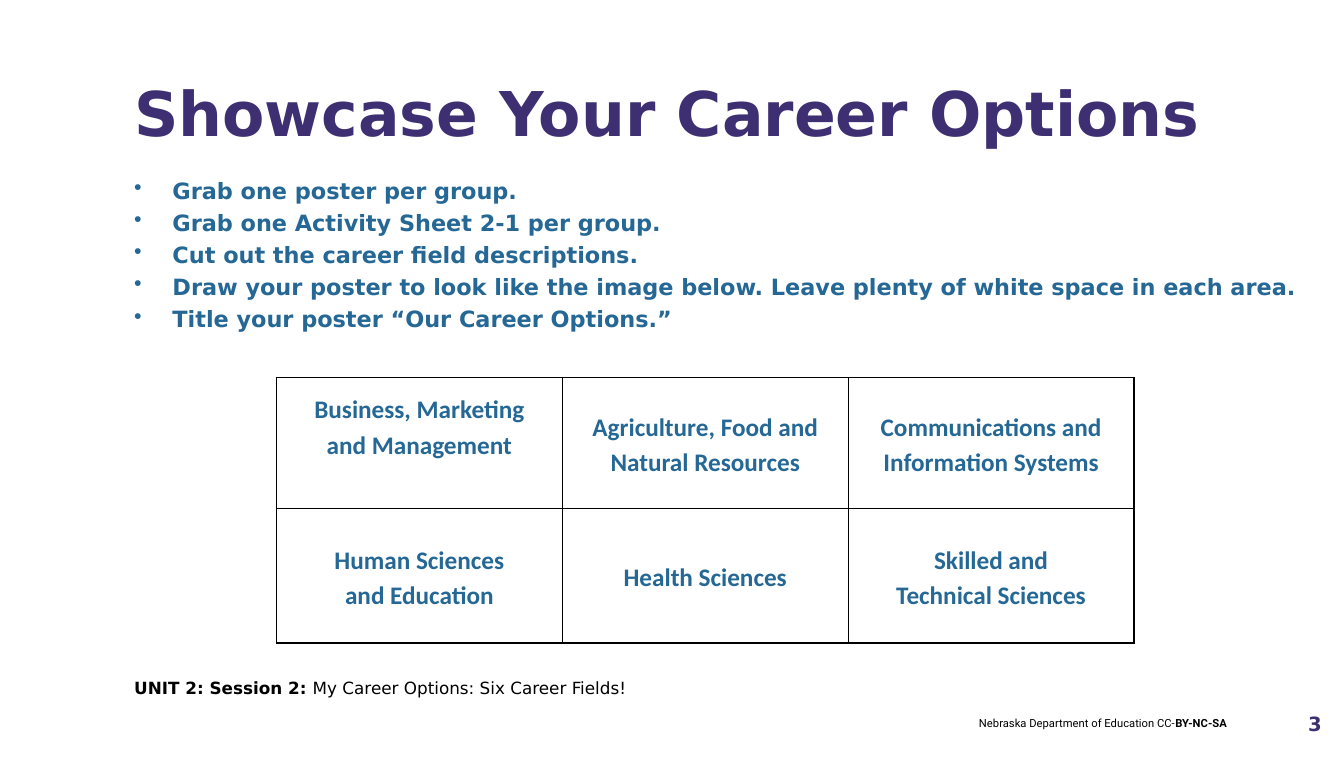
from dataclasses import dataclass

from lxml import etree
from pptx import Presentation
from pptx.dml.color import RGBColor as RGB
from pptx.enum.text import MSO_ANCHOR as Anchor, PP_ALIGN as Align
from pptx.oxml.ns import qn
from pptx.util import Inches, Pt


@dataclass(frozen=True)
class Theme:
    plum: str = "3E2F72"
    blue: str = "256895"
    black: str = "000000"
    sans: str = "DejaVu Sans"
    table: str = "Calibri"
    small: str = "Roboto"
    title: int = 44
    cell: int = 18
    body: int = 16
    page: int = 14
    unit: int = 12
    credit: int = 8


THEME = Theme()

STEPS = [
    "Grab one poster per group.",
    "Grab one Activity Sheet 2-1 per group.",
    "Cut out the career field descriptions.",
    "Draw your poster to look like the image below. Leave plenty of white space in each area.",
    "Title your poster “Our Career Options.”",
]

FIELDS = [
    [
        ["Business, Marketing", "and Management"],
        ["Agriculture, Food and Natural Resources"],
        ["Communications and", "Information Systems"],
    ],
    [
        ["Human Sciences", "and Education"],
        ["Health Sciences"],
        ["Skilled and", "Technical Sciences"],
    ],
]


def write(para, text, size, font=THEME.sans, color=THEME.black, bold=False, align=Align.LEFT):
    para.alignment = align
    run = para.add_run()
    run.text = text
    run.font.name = font
    run.font.size = Pt(size)
    run.font.bold = bold
    run.font.color.rgb = RGB.from_string(color)


def add_box(slide, left, top, width, height, anchor=Anchor.TOP):
    box = slide.shapes.add_textbox(Inches(left), Inches(top), Inches(width), Inches(height))
    frame = box.text_frame
    frame.word_wrap = True
    frame.vertical_anchor = anchor
    frame.margin_left = frame.margin_right = 0
    frame.margin_top = frame.margin_bottom = 0
    return frame


def add_para(frame, index):
    return frame.add_paragraph() if index else frame.paragraphs[0]


def add_bullet(para):
    props = para._p.get_or_add_pPr()
    props.set("marL", str(Inches(0.38)))
    props.set("indent", str(-Inches(0.38)))
    etree.SubElement(props, qn("a:buChar"), char="•")


def add_steps(slide):
    frame = add_box(slide, 1.33, 1.75, 11.63, 4.93)
    for index, step in enumerate(STEPS):
        para = add_para(frame, index)
        add_bullet(para)
        if index:
            para.space_before = Pt(3.8)
        write(para, step, THEME.body, color=THEME.blue, bold=True)


def add_border(cell):
    props = cell._tc.get_or_add_tcPr()
    for index, side in enumerate(("lnL", "lnR", "lnT", "lnB")):
        line = etree.Element(qn(f"a:{side}"), w=str(Pt(1)))
        fill = etree.SubElement(line, qn("a:solidFill"))
        etree.SubElement(fill, qn("a:srgbClr"), val=THEME.black)
        props.insert(index, line)


def fill_cell(cell, lines):
    cell.fill.background()
    add_border(cell)
    cell.vertical_anchor = Anchor.MIDDLE
    cell.margin_left = cell.margin_right = Inches(0.08)
    cell.margin_top = cell.margin_bottom = 0
    for index, text in enumerate(lines):
        para = add_para(cell.text_frame, index)
        para.line_spacing = 1.15
        write(para, text, THEME.cell, font=THEME.table, color=THEME.blue,
              bold=True, align=Align.CENTER)


def add_grid(slide):
    shape = slide.shapes.add_table(2, 3, Inches(2.74), Inches(3.74), Inches(8.5), Inches(2.63))
    table = shape.table
    table.first_row = table.horz_banding = False
    for col in table.columns:
        col.width = Inches(8.5 / 3)
    for row, height, names in zip(table.rows, (1.3, 1.33), FIELDS):
        row.height = Inches(height)
        for cell, lines in zip(row.cells, names):
            fill_cell(cell, lines)
    table.cell(0, 0).margin_bottom = Inches(0.35)


def add_footer(slide):
    unit = add_box(slide, 1.33, 6.71, 5.17, 0.43).paragraphs[0]
    write(unit, "UNIT 2: Session 2: ", THEME.unit, bold=True)
    write(unit, "My Career Options: Six Career Fields!", THEME.unit)

    credit = add_box(slide, 8.4, 7.1, 3.76, 0.25).paragraphs[0]
    for text, bold in (("Nebraska Department of Education CC-", False), ("BY-NC-SA", True)):
        write(credit, text, THEME.credit, font=THEME.small, bold=bold, align=Align.RIGHT)

    page = add_box(slide, 12.65, 6.98, 0.45, 0.37, anchor=Anchor.MIDDLE).paragraphs[0]
    write(page, "3", THEME.page, color=THEME.plum, bold=True, align=Align.RIGHT)


def main():
    deck = Presentation()
    deck.slide_width = Inches(13.32)
    deck.slide_height = Inches(7.5)
    slide = deck.slides.add_slide(deck.slide_layouts[6])
    title = add_box(slide, 1.33, 0.74, 11.32, 1.03).paragraphs[0]
    write(title, "Showcase Your Career Options", THEME.title, color=THEME.plum, bold=True)
    add_steps(slide)
    add_grid(slide)
    add_footer(slide)
    deck.save("out.pptx")


if __name__ == "__main__":
    main()
